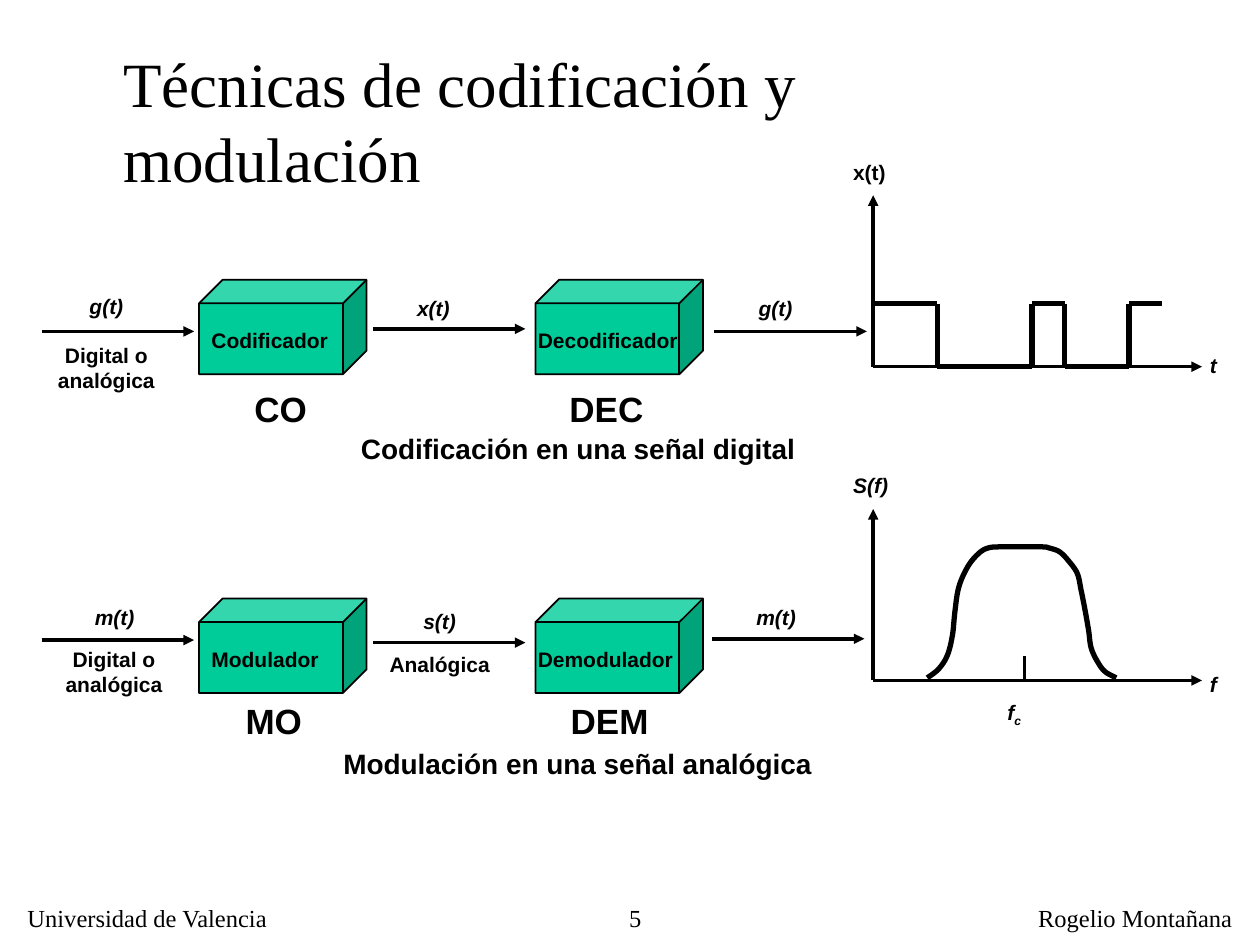
from itertools import pairwise

from lxml import etree
from pptx import Presentation
from pptx.dml.color import RGBColor
from pptx.enum.shapes import MSO_CONNECTOR, MSO_SHAPE
from pptx.enum.text import MSO_ANCHOR, MSO_AUTO_SIZE, PP_ALIGN
from pptx.oxml.ns import qn
from pptx.util import Inches, Pt

BLACK = RGBColor(0x00, 0x00, 0x00)
GREEN = RGBColor(0x00, 0xCC, 0x99)
LEFT, CENTER, RIGHT = PP_ALIGN.LEFT, PP_ALIGN.CENTER, PP_ALIGN.RIGHT
CUBE, STRAIGHT = MSO_SHAPE.CUBE, MSO_CONNECTOR.STRAIGHT

FRAME = {"word_wrap": False, "auto_size": MSO_AUTO_SIZE.SHAPE_TO_FIT_TEXT,
         "vertical_anchor": MSO_ANCHOR.TOP}
LABEL = {"name": "Arial", "size": Pt(12), "bold": True}
SIGNAL = {**LABEL, "italic": True}
CAPTION = {**LABEL, "size": Pt(16)}
ACRONYM = {**LABEL, "size": Pt(20)}
TITLE = {"name": "Times New Roman", "size": Pt(36)}
FOOTER = {**TITLE, "size": Pt(14)}

BLOCKS = [
    (1.58, 2.22, "Codificador", (1.58, 1.13), "CO", (1.92, 3.03, 0.62, 0.43)),
    (4.25, 2.22, "Decodificador", (4.17, 1.31), "DEC", (4.42, 3.03, 0.79, 0.43)),
    (1.58, 4.75, "Modulador", (1.58, 1.06), "MO", (1.85, 5.5, 0.65, 0.43)),
    (4.25, 4.75, "Demodulador", (4.17, 1.28), "DEM", (4.43, 5.5, 0.82, 0.43)),
]
FLOWS = [
    (0.33, 2.63, "g(t)", (0.61, 2.28, 0.47, 0.3)),
    (2.96, 2.61, "x(t)", (3.21, 2.3, 0.46, 0.3)),
    (5.67, 2.63, "g(t)", (5.92, 2.3, 0.47, 0.3)),
    (0.33, 5.08, "m(t)", (0.65, 4.75, 0.52, 0.3)),
    (2.96, 5.1, "s(t)", (3.26, 4.78, 0.46, 0.3)),
    (5.65, 5.07, "m(t)", (5.9, 4.75, 0.52, 0.3)),
]
TEXTS = [
    ("Digital o\nanalógica", (0.36, 2.67, 0.97, 0.5), LABEL, CENTER),
    ("Digital o\nanalógica", (0.42, 5.08, 0.97, 0.5), LABEL, CENTER),
    ("Analógica", (2.99, 5.12, 1, 0.3), LABEL, CENTER),
    ("Codificación en una señal digital", (2.76, 3.38, 3.66, 0.37), CAPTION, CENTER),
    ("Modulación en una señal analógica", (2.62, 5.88, 3.93, 0.37), CAPTION, CENTER),
    ("x(t)", (6.67, 1.22, 0.46, 0.3), LABEL, CENTER),
    ("S(f)", (6.67, 3.7, 0.48, 0.3), SIGNAL, CENTER),
    ("t", (9.5, 2.75, 0.26, 0.3), SIGNAL, CENTER),
    ("f", (9.5, 5.28, 0.26, 0.3), SIGNAL, CENTER),
    ("Universidad de Valencia", (0.12, 7.12, 2.13, 0.33), FOOTER, LEFT),
    ("5", (4.13, 7.12, 1.06, 0.31), FOOTER, RIGHT),
    ("Rogelio Montañana", (8.14, 7.12, 1.74, 0.33), FOOTER, LEFT),
]
AXIS_X, AXIS_END = 6.93, 9.54
PULSE_EDGES = [AXIS_X, 7.44, 8.19, 8.45, 8.96, 9.22]
PULSE_HIGH, PULSE_LOW = 2.41, 2.91
SPECTRUM = [
    (7.36, 5.38), (7.45, 5.31), (7.52, 5.2), (7.56, 5.04), (7.58, 4.85),
    (7.61, 4.66), (7.68, 4.5), (7.76, 4.4), (7.84, 4.35), (7.96, 4.34),
    (8.26, 4.34), (8.33, 4.35), (8.41, 4.38), (8.48, 4.45), (8.55, 4.55),
    (8.58, 4.68), (8.61, 4.83), (8.64, 5), (8.66, 5.14), (8.71, 5.25),
    (8.77, 5.33), (8.86, 5.38),
]
CURVE_STEPS = 6


def apply(target, values):
    for name, value in values.items():
        setattr(target, name, value)


def style_run(run, style):
    apply(run.font, style)
    run.font.color.rgb = BLACK


def fill_text(frame, text, style, align):
    frame.text = text
    apply(frame, FRAME)
    for paragraph in frame.paragraphs:
        paragraph.alignment = align
        for run in paragraph.runs:
            style_run(run, style)


def add_title(slide, text, box):
    title = slide.shapes.title
    sides = ("left", "top", "width", "height")
    apply(title, dict(zip(sides, map(Inches, box))))
    fill_text(title.text_frame, text, TITLE, LEFT)


def add_text(slide, text, box, style, align=CENTER):
    frame = slide.shapes.add_textbox(*map(Inches, box)).text_frame
    fill_text(frame, text, style, align)
    return frame


def add_subscripted(slide, base, subscript, box):
    frame = add_text(slide, base, box, SIGNAL)
    run = frame.paragraphs[0].add_run()
    run.text = subscript
    style_run(run, SIGNAL)
    run.font._element.set("baseline", "-25000")


def add_line(slide, start, end, width=2, arrow=False):
    connector = slide.shapes.add_connector(STRAIGHT, *map(Inches, (*start, *end)))
    connector.line.color.rgb = BLACK
    connector.line.width = Pt(width)
    if arrow:
        etree.SubElement(connector.line._get_or_add_ln(), qn("a:tailEnd"), type="triangle")
    etree.SubElement(connector._element.spPr, qn("a:effectLst"))


def add_block(slide, left, top, name, name_span, acronym, acronym_box):
    cube = slide.shapes.add_shape(CUBE, *map(Inches, (left, top, 1.33, 0.75)))
    cube.shadow.inherit = False
    cube.fill.solid()
    cube.fill.fore_color.rgb = GREEN
    cube.line.color.rgb = BLACK
    cube.line.width = Pt(1)
    name_left, name_width = name_span
    add_text(slide, name, (name_left, top + 0.33, name_width, 0.3), LABEL, LEFT)
    add_text(slide, acronym, acronym_box, ACRONYM, LEFT)


def add_flow(slide, left, y, signal, box):
    add_line(slide, (left, y), (left + 1.21, y), arrow=True)
    add_text(slide, signal, box, SIGNAL)


def add_axes(slide, base, top):
    add_line(slide, (AXIS_X, base), (AXIS_X, top), arrow=True)
    add_line(slide, (AXIS_X, base), (AXIS_END, base), arrow=True)


def add_pulses(slide):
    for index, (start, end) in enumerate(pairwise(PULSE_EDGES)):
        level = PULSE_LOW if index % 2 else PULSE_HIGH
        add_line(slide, (start, level), (end, level), width=3)
    for edge in PULSE_EDGES[1:-1]:
        add_line(slide, (edge, PULSE_HIGH), (edge, PULSE_LOW), width=3)


def smooth(points):
    padded = [points[0], *points, points[-1]]
    for quad in zip(padded, padded[1:], padded[2:], padded[3:]):
        for step in range(CURVE_STEPS):
            t = step / CURVE_STEPS
            yield tuple(
                b + t * (c - a) / 2 + t**2 * (2 * a - 5 * b + 4 * c - d) / 2
                + t**3 * (3 * b - a - 3 * c + d) / 2
                for a, b, c, d in zip(*quad)
            )
    yield points[-1]


def add_spectrum(slide):
    first, *rest = [tuple(map(Inches, point)) for point in smooth(SPECTRUM)]
    builder = slide.shapes.build_freeform(*first)
    builder.add_line_segments(rest, close=False)
    curve = builder.convert_to_shape()
    curve.shadow.inherit = False
    curve.fill.background()
    curve.line.color.rgb = BLACK
    curve.line.width = Pt(3)


def main():
    deck = Presentation()
    apply(deck, {"slide_width": Inches(10), "slide_height": Inches(7.5)})
    slide = deck.slides.add_slide(deck.slide_layouts.get_by_name("Title Only"))
    add_title(slide, "Técnicas de codificación y modulación", (0.88, 0.3, 8.03, 0.7))
    for block in BLOCKS:
        add_block(slide, *block)
    for flow in FLOWS:
        add_flow(slide, *flow)
    add_axes(slide, 2.91, 1.55)
    add_pulses(slide)
    add_axes(slide, 5.4, 4.04)
    add_line(slide, (8.13, 5.4), (8.13, 5.21))
    add_spectrum(slide)
    for text in TEXTS:
        add_text(slide, *text)
    add_subscripted(slide, "f", "c", (7.89, 5.5, 0.32, 0.3))
    deck.save("out.pptx")


if __name__ == "__main__":
    main()
